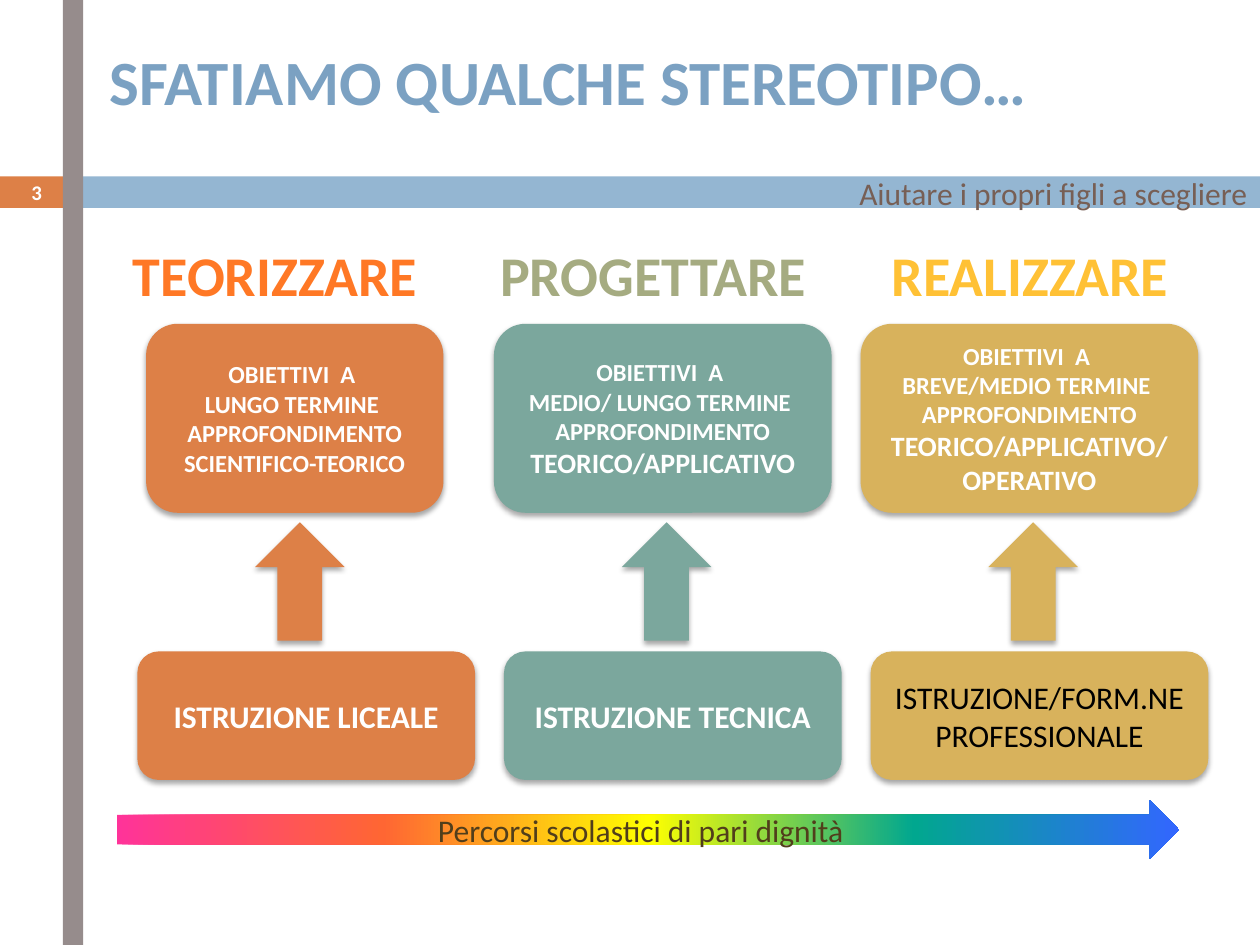
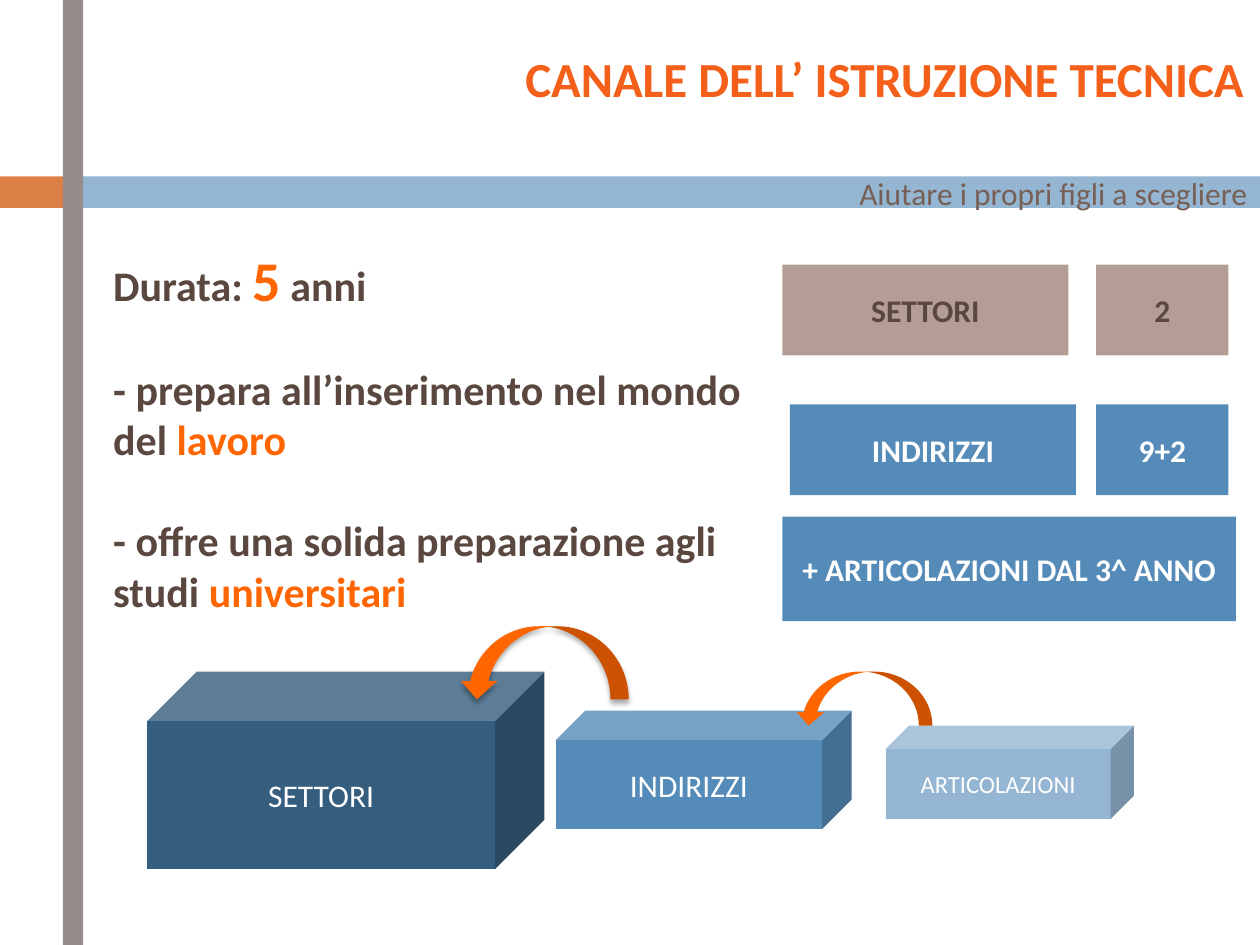
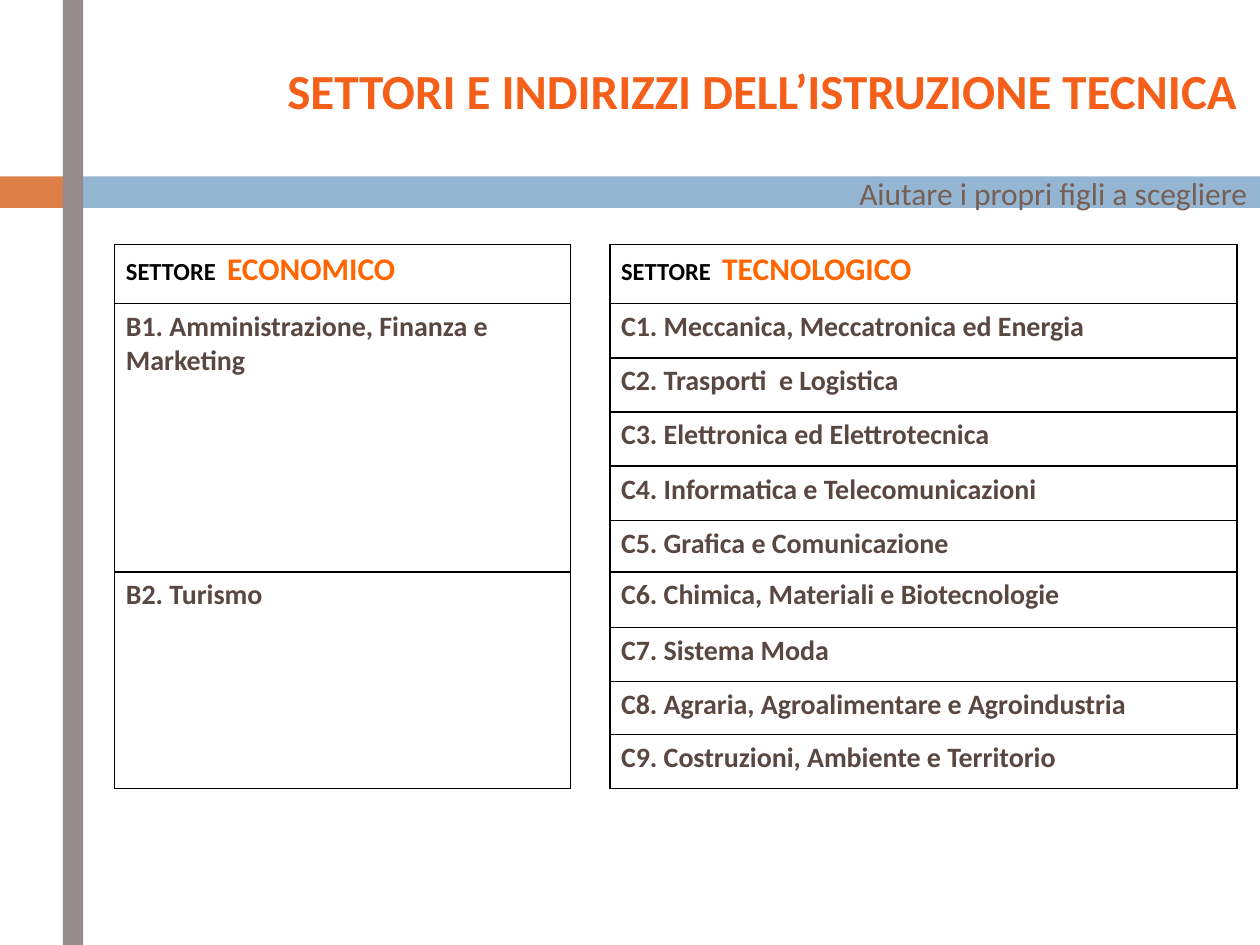
from lxml.etree import SubElement
from pptx import Presentation
from pptx.dml.color import RGBColor
from pptx.enum.shapes import MSO_SHAPE as Shape
from pptx.enum.text import MSO_ANCHOR as Anchor, MSO_AUTO_SIZE as AutoSize, PP_ALIGN as Align
from pptx.oxml.ns import qn
from pptx.util import Inches, Pt

FONT = "Calibri"
WHITE = RGBColor(0xFF, 0xFF, 0xFF)
BLACK = RGBColor(0x00, 0x00, 0x00)
ORANGE = RGBColor(0xDD, 0x80, 0x47)
GREEN = RGBColor(0x7B, 0xA7, 0x9D)
GOLD = RGBColor(0xD8, 0xB2, 0x5C)
SKY = RGBColor(0x94, 0xB6, 0xD2)
BLUE = RGBColor(0x55, 0x8B, 0xB8)
NAVY = RGBColor(0x35, 0x5D, 0x7E)
GREY = RGBColor(0x96, 0x8C, 0x8C)
TAUPE = RGBColor(0xB3, 0x9D, 0x94)
BROWN = RGBColor(0x59, 0x47, 0x40)
FOOTER_BROWN = RGBColor(0x77, 0x5F, 0x55)
ARROW_BROWN = RGBColor(0x51, 0x3E, 0x1B)
BRIGHT_ORANGE = RGBColor(0xFF, 0x66, 0x00)
TITLE_ORANGE = RGBColor(0xF4, 0x60, 0x19)
TITLE_BLUE = RGBColor(0x7B, 0xA1, 0xC2)
RAINBOW = [(0, "FF3399"), (25, "FF6633"), (50, "FFFF00"), (75, "01A78F"), (100, "3366FF")]

BANDS = [
    ((0, 1.4, 0.58, 0.25), ORANGE),
    ((0.65, 1.4, 9.35, 0.25), SKY),
    ((0.5, 0, 0.16, 7.5), GREY),
]
FOOTER = "Aiutare i propri figli a scegliere"

# A paragraph is a list of spans: plain text, or (text, size, colour).
PATHWAYS = [
    {
        "verb": "TEORIZZARE", "verb_left": 0.61, "verb_color": RGBColor(0xFF, 0x78, 0x25),
        "color": ORANGE, "goal_left": 1.16, "goal_width": 2.36,
        "goals": [["OBIETTIVI  A "], ["LUNGO TERMINE "], ["APPROFONDIMENTO SCIENTIFICO-TEORICO"]],
        "school": "ISTRUZIONE LICEALE", "school_color": WHITE, "school_bold": True,
    },
    {
        "verb": "PROGETTARE", "verb_left": 3.61, "verb_color": RGBColor(0xA5, 0xAB, 0x81),
        "color": GREEN, "goal_left": 3.92, "goal_width": 2.68,
        "goals": [["OBIETTIVI  A "], ["MEDIO/ LUNGO TERMINE "],
                  ["APPROFONDIMENTO ", ("TEORICO/APPLICATIVO", 16, WHITE)]],
        "school": "ISTRUZIONE TECNICA", "school_color": WHITE, "school_bold": True,
    },
    {
        "verb": "REALIZZARE", "verb_left": 6.6, "verb_color": RGBColor(0xFF, 0xC1, 0x35),
        "color": GOLD, "goal_left": 6.83, "goal_width": 2.68,
        "goals": [["OBIETTIVI  A "], ["BREVE/MEDIO TERMINE "],
                  ["APPROFONDIMENTO ", ("TEORICO/APPLICATIVO/", 16, WHITE)],
                  [("OPERATIVO", 16, WHITE)]],
        "school": "ISTRUZIONE/FORM.NE PROFESSIONALE", "school_color": BLACK, "school_bold": False,
    },
]

FEATURES = [
    ["Durata: ", ("5", 32, BRIGHT_ORANGE), " anni"],
    ["- prepara all’inserimento nel mondo del ", ("lavoro", 24, BRIGHT_ORANGE)],
    ["- offre una solida preparazione agli studi ", ("universitari", 24, BRIGHT_ORANGE)],
]
COUNTS = [
    ("SETTORI", (6.21, 2.1, 2.27, 0.72), TAUPE, BROWN),
    ("2", (8.7, 2.1, 1.05, 0.72), TAUPE, BROWN),
    ("INDIRIZZI", (6.27, 3.21, 2.27, 0.72), BLUE, WHITE),
    ("9+2", (8.7, 3.21, 1.05, 0.72), BLUE, WHITE),
    ("+ ARTICOLAZIONI DAL 3^ ANNO", (6.21, 4.1, 3.6, 0.83), BLUE, WHITE),
]
CUBES = [
    ("SETTORI", (1.17, 5.33, 3.15, 1.57), NAVY, 18),
    ("INDIRIZZI", (4.41, 5.64, 2.35, 0.94), BLUE, 18),
    ("ARTICOLAZIONI", (7.03, 5.76, 1.97, 0.74), SKY, 14),
]
CURVED_ARROWS = [((3.64, 4.97, 1.35, 0.58), True), ((6.31, 5.33, 1.09, 0.43), False)]

ECONOMIC = {1: "B1. Amministrazione, Finanza e Marketing", 6: "B2. Turismo"}
TECHNOLOGICAL = [
    "C1. Meccanica, Meccatronica ed Energia",
    "C2. Trasporti  e Logistica",
    "C3. Elettronica ed Elettrotecnica",
    "C4. Informatica e Telecomunicazioni",
    "C5. Grafica e Comunicazione",
    "C6. Chimica, Materiali e Biotecnologie",
    "C7. Sistema Moda",
    "C8. Agraria, Agroalimentare e Agroindustria",
    "C9. Costruzioni, Ambiente e Territorio",
]
COLUMN_WIDTHS = [3.62, 0.31, 4.98]
ROW_HEIGHTS = [0.47, 0.43, 0.43, 0.43, 0.43, 0.41, 0.44, 0.43, 0.42, 0.43]
MERGES = [((0, 1), (9, 1)), ((1, 0), (5, 0)), ((6, 0), (9, 0))]


def inches(place):
    return [Inches(length) for length in place]


def write(frame, paragraphs, size, color, bold=False, align=Align.CENTER,
          anchor=Anchor.MIDDLE, gap=0):
    """Fill a text frame; size and color hold for spans that give none."""
    frame.word_wrap = True
    frame.auto_size = AutoSize.NONE
    frame.vertical_anchor = anchor
    write_paragraphs(frame, paragraphs, size, color, bold, align, gap)


def write_paragraphs(frame, paragraphs, size, color, bold, align, gap=0):
    for index, spans in enumerate(paragraphs):
        para = frame.add_paragraph() if index else frame.paragraphs[0]
        para.alignment = align
        if index and gap:
            para.space_before = Pt(gap)
        for span in spans:
            text, span_size, span_color = (span, size, color) if isinstance(span, str) else span
            run = para.add_run()
            run.text = text
            run.font.name = FONT
            run.font.size = Pt(span_size)
            run.font.bold = bold
            run.font.color.rgb = span_color


def add_box(slide, kind, place, fill, shadow=False):
    box = slide.shapes.add_shape(kind, *inches(place))
    box.shadow.inherit = False
    box.line.fill.background()
    box.fill.solid()
    box.fill.fore_color.rgb = fill
    if shadow:
        effects = box._element.spPr.find(qn("a:effectLst"))
        outer = SubElement(effects, qn("a:outerShdw"), blurRad=str(Pt(3)), dist=str(Pt(2)),
                           dir="5400000", rotWithShape="0")
        tint = SubElement(outer, qn("a:srgbClr"), val="000000")
        SubElement(tint, qn("a:alpha"), val="35000")
    return box


def add_label(slide, place, text, size, color, **style):
    label = slide.shapes.add_textbox(*inches(place))
    write(label.text_frame, [[text]], size, color, **style)
    return label


def set_title(slide, place, text, size, color, align, anchor=Anchor.MIDDLE):
    title = slide.shapes.title
    title.left, title.top, title.width, title.height = inches(place)
    write(title.text_frame, [[text]], size, color, True, align, anchor)


def move_bands_to_layout(slide):
    """Draw the bands and footer on a slide, then hand them to its layout."""
    parts = [add_box(slide, Shape.RECTANGLE, place, fill) for place, fill in BANDS]
    parts.append(add_label(slide, (5.47, 1.4, 4.53, 0.26), FOOTER, 18, FOOTER_BROWN,
                           align=Align.RIGHT))
    for number, part in enumerate(parts, start=101):
        part._element.nvSpPr.cNvPr.set("id", str(number))
        slide.slide_layout.shapes._spTree.append(part._element)


def fill_with_rainbow(shape):
    shape.fill.gradient()
    shape.fill.gradient_angle = 0
    stops = shape._element.spPr.find(".//" + qn("a:gsLst"))
    for stop in list(stops):
        stops.remove(stop)
    for percent, color in RAINBOW:
        stop = SubElement(stops, qn("a:gs"), pos=str(percent * 1000))
        SubElement(stop, qn("a:srgbClr"), val=color)


def build_stereotypes(slide):
    set_title(slide, (0.77, 0.29, 8.74, 0.71), "SFATIAMO QUALCHE STEREOTIPO…", 36,
              TITLE_BLUE, Align.LEFT, Anchor.TOP)
    add_label(slide, (0, 1.39, 0.58, 0.27), "3", 11.9, WHITE, bold=True)
    for column, pathway in enumerate(PATHWAYS):
        left = 1.09 + column * 2.91
        color = pathway["color"]
        school = add_box(slide, Shape.ROUNDED_RECTANGLE, (left, 5.17, 2.68, 1.02), color, True)
        write(school.text_frame, [[pathway["school"]]], 18, pathway["school_color"],
              pathway["school_bold"])
        arrow = add_box(slide, Shape.RIGHT_ARROW, (left + 0.82, 4.26, 0.94, 0.71), color, True)
        arrow.rotation = 270
        goal = add_box(slide, Shape.ROUNDED_RECTANGLE,
                       (pathway["goal_left"], 2.57, pathway["goal_width"], 1.5), color, True)
        write(goal.text_frame, pathway["goals"], 14, WHITE, True)
        add_label(slide, (pathway["verb_left"], 1.86, 3.15, 0.64), pathway["verb"], 32,
                  pathway["verb_color"], bold=True, anchor=Anchor.TOP)
    dignity = add_box(slide, Shape.RIGHT_ARROW, (0.93, 6.35, 8.43, 0.47), SKY)
    fill_with_rainbow(dignity)
    write(dignity.text_frame, [["Percorsi scolastici di pari dignità"]], 18, ARROW_BROWN)


def build_technical_channel(slide):
    set_title(slide, (2.64, 0.29, 7.33, 0.66), "CANALE DELL’ ISTRUZIONE TECNICA", 28,
              TITLE_ORANGE, Align.RIGHT)
    features = add_box(slide, Shape.RECTANGLE, (0.8, 1.7, 5.26, 3.43), WHITE)
    write(features.text_frame, FEATURES, 24, BROWN, True, Align.LEFT, gap=29)
    for text, place, fill, color in COUNTS:
        count = add_box(slide, Shape.RECTANGLE, place, fill)
        write(count.text_frame, [[text]], 18, color, True)
    for text, place, fill, size in CUBES:
        cube = add_box(slide, Shape.CUBE, place, fill)
        write(cube.text_frame, [[text]], size, WHITE)
    for place, shadow in CURVED_ARROWS:
        arrow = add_box(slide, Shape.CURVED_DOWN_ARROW, place, BRIGHT_ORANGE, shadow)
        arrow._element.spPr.find(qn("a:xfrm")).set("flipH", "1")


def set_borders(cell, black_sides):
    properties = cell._tc.get_or_add_tcPr()
    for side in "LRTB":
        line = SubElement(properties, qn(f"a:ln{side}"), w=str(Pt(1)))
        if side in black_sides:
            fill = SubElement(line, qn("a:solidFill"))
            SubElement(fill, qn("a:srgbClr"), val=str(BLACK))
        else:
            SubElement(line, qn("a:noFill"))


def build_sectors(slide):
    set_title(slide, (2.18, 0.44, 7.87, 0.55), "SETTORI E INDIRIZZI DELL’ISTRUZIONE TECNICA",
              28, TITLE_ORANGE, Align.LEFT)
    place = (0.91, 1.94, sum(COLUMN_WIDTHS), sum(ROW_HEIGHTS))
    table = slide.shapes.add_table(len(ROW_HEIGHTS), len(COLUMN_WIDTHS), *inches(place)).table
    table.first_row = table.horz_banding = False
    for column, width in zip(table.columns, COLUMN_WIDTHS):
        column.width = Inches(width)
    for row, height in zip(table.rows, ROW_HEIGHTS):
        row.height = Inches(height)
        for index, cell in enumerate(row.cells):
            set_borders(cell, "LR" if index == 1 else "LRTB")
            cell.fill.background()
            cell.margin_left = cell.margin_right = Inches(0.09)
            cell.margin_top = cell.margin_bottom = Inches(0.05)
    for first, last in MERGES:
        table.cell(*first).merge(table.cell(*last))

    texts = {(0, column): ["SETTORE  ", (name, 18, BRIGHT_ORANGE)]
             for column, name in ((0, "ECONOMICO"), (2, "TECNOLOGICO"))}
    texts.update({(row, 0): [(text, 16, BROWN)] for row, text in ECONOMIC.items()})
    texts.update({(row, 2): [(text, 16, BROWN)]
                  for row, text in enumerate(TECHNOLOGICAL, start=1)})
    for position, spans in texts.items():
        write_paragraphs(table.cell(*position).text_frame, [spans], 14, BLACK, True, Align.LEFT)


def main():
    deck = Presentation()
    deck.slide_width, deck.slide_height = Inches(10), Inches(7.5)
    title_only = deck.slide_layouts[5]
    builders = [build_stereotypes, build_technical_channel, build_sectors]
    slides = [deck.slides.add_slide(title_only) for _ in builders]
    move_bands_to_layout(slides[0])
    for slide, build in zip(slides, builders):
        build(slide)
    deck.save("out.pptx")


if __name__ == "__main__":
    main()
